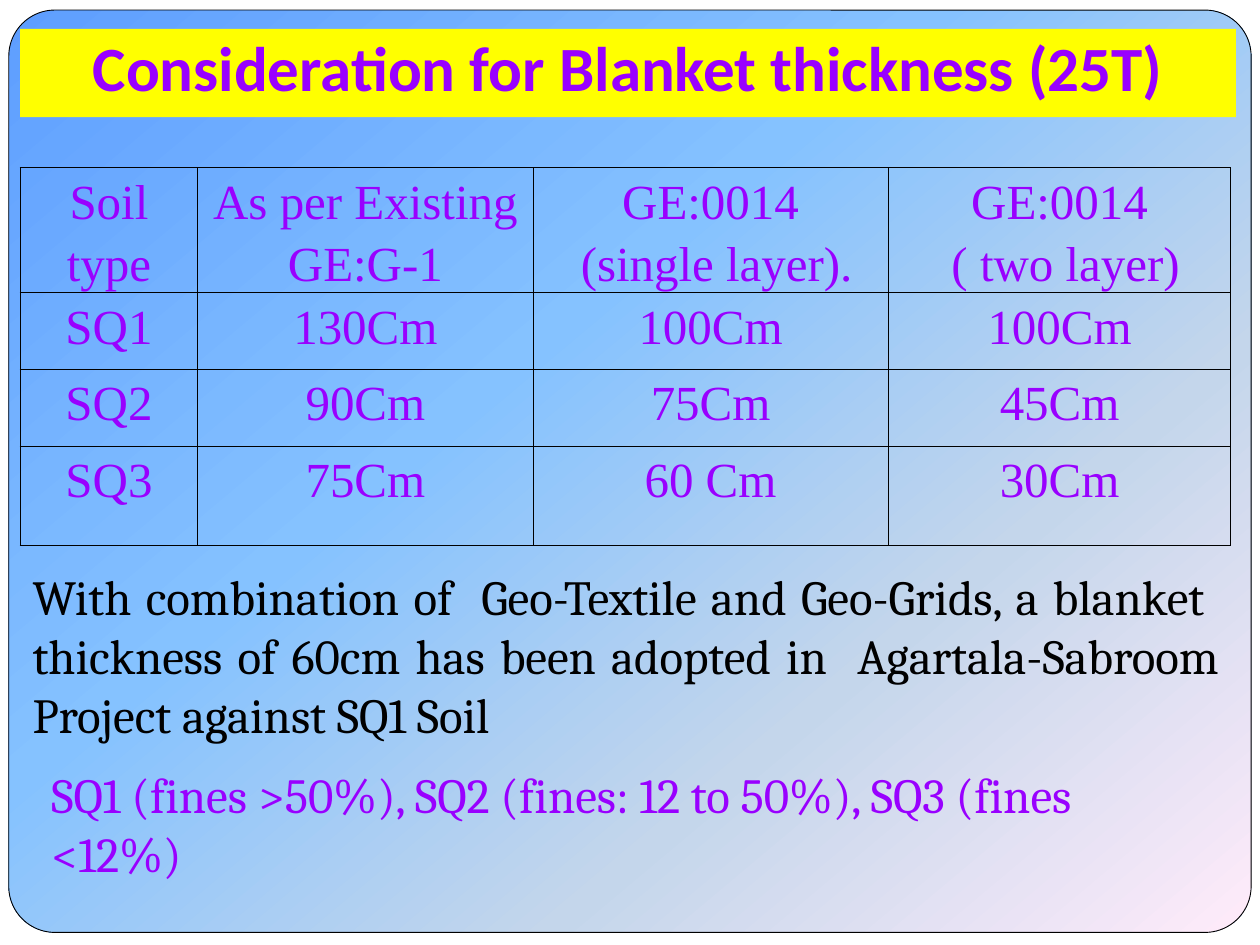
from copy import deepcopy
from dataclasses import dataclass

from lxml import etree
from pptx import Presentation
from pptx.dml.color import RGBColor
from pptx.enum.shapes import MSO_SHAPE
from pptx.enum.text import MSO_ANCHOR, MSO_AUTO_SIZE, PP_ALIGN
from pptx.oxml.ns import qn
from pptx.slide import Slide
from pptx.table import _Cell
from pptx.text.text import TextFrame
from pptx.util import Inches, Pt

ROUND = MSO_SHAPE.ROUNDED_RECTANGLE
BOTTOM = MSO_ANCHOR.BOTTOM
FIXED = MSO_AUTO_SIZE.NONE
GROW = MSO_AUTO_SIZE.SHAPE_TO_FIT_TEXT
LEFT, CENTER, JUST = PP_ALIGN.LEFT, PP_ALIGN.CENTER, PP_ALIGN.JUSTIFY

PURPLE, BLACK, YELLOW, WHITE = "9900FF", "000000", "FFFF00", "FFFFFF"
STOPS = [(0, "5E9EFF"), (0.4, "85C2FF"), (0.7, "C4D6EB"), (1, "FFEBFA")]
COLS = [1.41, 2.66, 2.82, 2.72]
ROWS = [0.65, 0.61, 0.61, 0.79]
SOILS = [
    ["Soil type", "As per Existing GE:G-1",
     "GE:0014\n (single layer).", "GE:0014\n ( two layer)"],
    ["SQ1", "130Cm", "100Cm", "100Cm"],
    ["SQ2", "90Cm", "75Cm", "45Cm"],
    ["SQ3", "75Cm", "60 Cm", "30Cm"],
]


@dataclass
class Note:
    text: str
    box: tuple[float, float, float, float]
    color: str
    align: PP_ALIGN


NOTES = [
    Note("With combination of  Geo-Textile and Geo-Grids, a blanket  thickness "
         "of 60cm has been adopted in  Agartala-Sabroom Project against SQ1 Soil",
         (0.16, 4.45, 9.61, 1.51), BLACK, JUST),
    Note("SQ1 (fines >50%), SQ2 (fines: 12 to 50%), SQ3 (fines <12%)",
         (0.31, 6.02, 9.3, 1.04), PURPLE, LEFT),
]


def rgb(code: str) -> RGBColor:
    return RGBColor.from_string(code)


def write(frame: TextFrame, text: str, font: str, color: str, align: PP_ALIGN,
          size: int = 28, bold: bool = False, space: float = 1.0) -> None:
    frame.text = text
    frame.word_wrap = True
    for para in frame.paragraphs:
        para.alignment = align
        para.line_spacing = space
        para.font.name = font
        para.font.size = Pt(size)
        para.font.bold = bold
        para.font.color.rgb = rgb(color)


def add_panel(slide: Slide) -> None:
    panel = slide.shapes.add_shape(
        ROUND, Inches(0.07), Inches(0.08), Inches(9.86), Inches(7.32))
    panel.adjustments[0] = 0.05
    panel.shadow.inherit = False
    panel.line.color.rgb = rgb(BLACK)
    panel.line.width = Pt(0.5)
    panel.fill.gradient()
    panel.fill.gradient_angle = 310
    stops = panel._element.spPr.find(".//" + qn("a:gsLst"))
    while len(stops) < len(STOPS):
        stops.append(deepcopy(stops[0]))
    for stop, (place, color) in zip(panel.fill.gradient_stops, STOPS):
        stop.position = place
        stop.color.rgb = rgb(color)


def add_edges(cell: _Cell) -> None:
    props = cell._tc.get_or_add_tcPr()
    for i, side in enumerate(("lnL", "lnR", "lnT", "lnB")):
        line = etree.Element(qn(f"a:{side}"), w=str(Pt(0.5)))
        fill = etree.SubElement(line, qn("a:solidFill"))
        etree.SubElement(fill, qn("a:srgbClr"), val=BLACK)
        props.insert(i, line)


def add_soils(slide: Slide) -> None:
    table = slide.shapes.add_table(
        len(ROWS), len(COLS), Inches(0.16), Inches(1.33),
        Inches(sum(COLS)), Inches(sum(ROWS))).table
    table.first_row = table.horz_banding = False
    for col, width in zip(table.columns, COLS):
        col.width = Inches(width)
    for r, (high, texts) in enumerate(zip(ROWS, SOILS)):
        table.rows[r].height = Inches(high)
        for c, text in enumerate(texts):
            cell = table.cell(r, c)
            cell.margin_left = cell.margin_right = Inches(0.07)
            cell.margin_top = cell.margin_bottom = 0
            cell.fill.background()
            add_edges(cell)
            write(cell.text_frame, text, "Times New Roman", PURPLE, CENTER,
                  space=1.15)


def add_note(slide: Slide, note: Note) -> None:
    frame = slide.shapes.add_textbox(*map(Inches, note.box)).text_frame
    write(frame, note.text, "Cambria", note.color, note.align)
    frame.auto_size = GROW


def set_title(slide: Slide) -> None:
    title = slide.shapes.title
    title.left, title.top = Inches(0.16), Inches(0.23)
    title.width, title.height = Inches(9.65), Inches(0.7)
    title.fill.solid()
    title.fill.fore_color.rgb = rgb(YELLOW)
    frame = title.text_frame
    write(frame, "Consideration for Blanket thickness (25T)", "Calibri",
          PURPLE, CENTER, size=36, bold=True)
    frame.auto_size = FIXED
    frame.vertical_anchor = BOTTOM
    frame.margin_bottom = Inches(0.1)
    slide.shapes._spTree.append(title._element)


def main() -> None:
    deck = Presentation()
    deck.slide_width, deck.slide_height = Inches(10), Inches(7.5)
    slide = deck.slides.add_slide(deck.slide_layouts[5])
    slide.background.fill.solid()
    slide.background.fill.fore_color.rgb = rgb(WHITE)
    add_panel(slide)
    add_soils(slide)
    for note in NOTES:
        add_note(slide, note)
    set_title(slide)
    deck.save("out.pptx")


if __name__ == "__main__":
    main()
